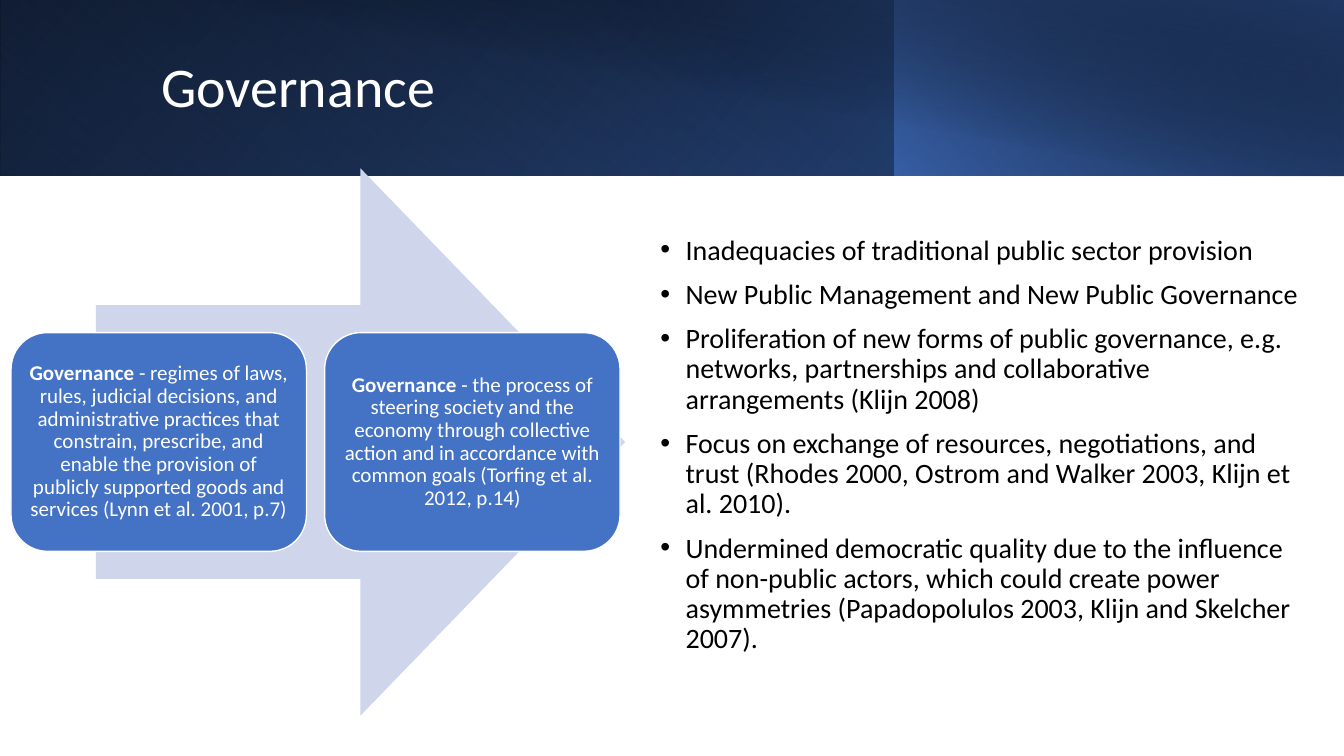
from lxml import etree
from pptx import Presentation
from pptx.dml.color import RGBColor
from pptx.enum import shapes, text
from pptx.oxml import ns
from pptx.util import Inches, Pt

BLACK = RGBColor(0x00, 0x00, 0x00)
WHITE = RGBColor(0xFF, 0xFF, 0xFF)
BLUE = RGBColor(0x44, 0x72, 0xC4)
DEEP_BLUE = RGBColor(0x2F, 0x55, 0x97)
NAVY = RGBColor(0x20, 0x38, 0x64)
PALE_BLUE = RGBColor(0xCF, 0xD5, 0xEA)
FONT = "Calibri"

# left, width, height, rotation, flipped, angle, stops (position, colour, opacity)
HEADER_BANDS = [
    (0, 13.33, 1.74, 0, True, 140, [(0, BLACK, 100), (100, DEEP_BLUE, 100)]),
    (0, 8.88, 1.74, 180, True, 230, [(20, BLUE, 0), (100, NAVY, 55)]),
    (8.87, 4.46, 1.74, 0, True, 220, [(0, BLUE, 66), (100, BLACK, 30)]),
    (0.5, 12.83, 1.75, 0, False, 280, [(50, BLACK, 0), (99, NAVY, 52)]),
]
DEFINITIONS = [
    " - regimes of laws, rules, judicial decisions, and administrative practices that "
    "constrain, prescribe, and enable the provision of publicly supported goods and "
    "services (Lynn et al. 2001, p.7)",
    " - the process of steering society and the economy through collective action and "
    "in accordance with common goals (Torfing et al. 2012, p.14)",
]
POINTS = [
    "Inadequacies of traditional public sector provision",
    "New Public Management and New Public Governance",
    "Proliferation of new forms of public governance, e.g. networks, partnerships and "
    "collaborative arrangements (Klijn 2008)",
    "Focus on exchange of resources, negotiations, and trust (Rhodes 2000, Ostrom and "
    "Walker 2003, Klijn et al. 2010).",
    "Undermined democratic quality due to the influence of non-public actors, which "
    "could create power asymmetries (Papadopolulos 2003, Klijn and Skelcher 2007).",
]


def place(shape, left, top, width, height):
    shape.left, shape.top = Inches(left), Inches(top)
    shape.width, shape.height = Inches(width), Inches(height)


def write(paragraph, content, size, color=WHITE, bold=False,
          align=text.PP_ALIGN.LEFT, before=0):
    paragraph.alignment = align
    paragraph.line_spacing = 0.9
    paragraph.space_before = Pt(before)
    run = paragraph.add_run()
    run.text = content
    run.font.name, run.font.size, run.font.bold = FONT, Pt(size), bold
    run.font.color.rgb = color


def add_shape(slide, kind, left, top, width, height, fill=None, line=None):
    shape = slide.shapes.add_shape(kind, Inches(left), Inches(top),
                                   Inches(width), Inches(height))
    shape.shadow.inherit = False
    if fill is not None:
        shape.fill.solid()
        shape.fill.fore_color.rgb = fill
    if line is None:
        shape.line.fill.background()
    else:
        shape.line.color.rgb = line
        shape.line.width = Pt(1)
    return shape


def add_band(slide, left, width, height, rotation, flipped, angle, stops):
    band = add_shape(slide, shapes.MSO_SHAPE.RECTANGLE, left, 0, width, height)
    band.rotation = rotation
    properties = band._element.spPr
    if flipped:
        properties.find(ns.qn("a:xfrm")).set("flipH", "1")
    # Gradient stops with transparency
    band.fill.gradient()
    gradient = properties.find(ns.qn("a:gradFill"))
    for child in list(gradient):
        gradient.remove(child)
    stop_list = etree.SubElement(gradient, ns.qn("a:gsLst"))
    for position, color, opacity in stops:
        stop = etree.SubElement(stop_list, ns.qn("a:gs"), pos=str(position * 1000))
        value = etree.SubElement(stop, ns.qn("a:srgbClr"), val=str(color))
        etree.SubElement(value, ns.qn("a:alpha"), val=str(opacity * 1000))
    etree.SubElement(gradient, ns.qn("a:lin"), ang=str(angle * 60000), scaled="0")


def add_card(slide, left, definition):
    card = add_shape(slide, shapes.MSO_SHAPE.ROUNDED_RECTANGLE, left, 3.3, 2.93, 2.17,
                     fill=BLUE, line=WHITE)
    frame = card.text_frame
    frame.word_wrap = True
    frame.vertical_anchor = text.MSO_ANCHOR.MIDDLE
    frame.margin_left = frame.margin_right = Inches(0.06)
    frame.margin_top = frame.margin_bottom = Inches(0.06)
    paragraph = frame.paragraphs[0]
    write(paragraph, "Governance", 15, bold=True, align=text.PP_ALIGN.CENTER)
    write(paragraph, definition, 15, align=text.PP_ALIGN.CENTER)


def fill_title(slide, content):
    title = slide.shapes.title
    place(title, 1.5, 0.32, 10.82, 1.13)
    title.text_frame.vertical_anchor = text.MSO_ANCHOR.MIDDLE
    write(title.text_frame.paragraphs[0], content, 40)
    # Bring the title in front of the header bands
    slide.shapes._spTree.append(title._element)


def fill_list(body, points):
    place(body, 6.45, 2.29, 6.62, 5.02)
    frame = body.text_frame
    frame.auto_size = text.MSO_AUTO_SIZE.NONE
    frame.vertical_anchor = text.MSO_ANCHOR.TOP
    for index, point in enumerate(points):
        paragraph = frame.add_paragraph() if index else frame.paragraphs[0]
        write(paragraph, point, 20, color=BLACK, before=10)
        properties = paragraph._p.get_or_add_pPr()
        properties.set("marL", str(Inches(0.25)))
        properties.set("indent", str(Inches(-0.25)))
        etree.SubElement(properties, ns.qn("a:buFont"), typeface="Arial")
        etree.SubElement(properties, ns.qn("a:buChar"), char="•")


def main():
    presentation = Presentation()
    presentation.slide_width, presentation.slide_height = Inches(13.33), Inches(7.5)
    slide = presentation.slides.add_slide(presentation.slide_layouts[1])

    # Header
    for band in HEADER_BANDS:
        add_band(slide, *band)
    fill_title(slide, "Governance")

    # Arrow with the two definitions
    add_shape(slide, shapes.MSO_SHAPE.RIGHT_ARROW, 0.95, 1.67, 5.25, 5.43, fill=PALE_BLUE)
    for index, definition in enumerate(DEFINITIONS):
        add_card(slide, 0.11 + index * 3.11, definition)

    # Bullet list
    fill_list(slide.placeholders[1], POINTS)

    presentation.save("out.pptx")


if __name__ == "__main__":
    main()
